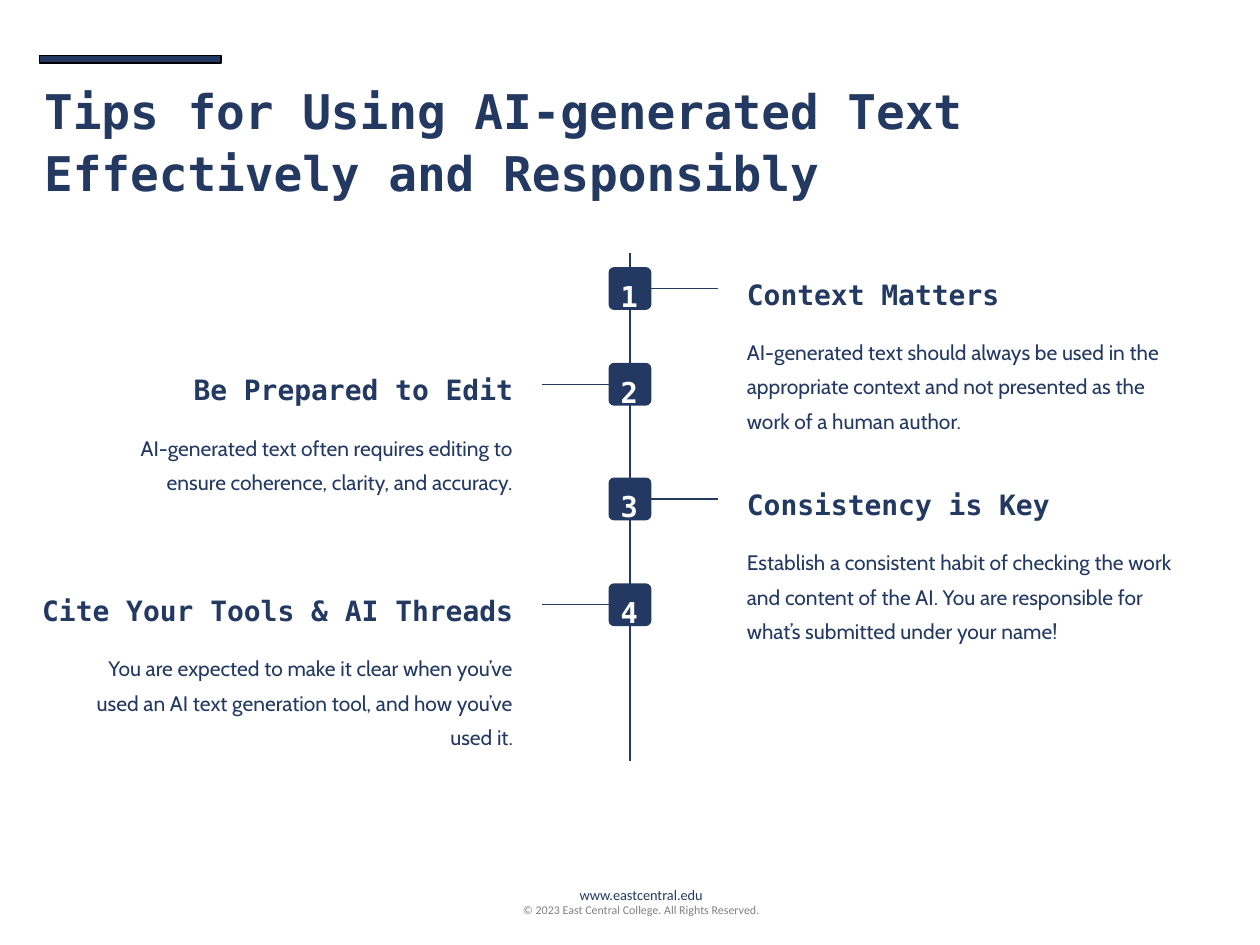
from dataclasses import dataclass

from lxml.etree import SubElement
from pptx import Presentation
from pptx.dml.color import RGBColor
from pptx.enum.shapes import MSO_CONNECTOR as Connector, MSO_SHAPE as Shape
from pptx.enum.text import MSO_ANCHOR as Anchor, MSO_AUTO_SIZE as AutoSize, PP_ALIGN as Align
from pptx.oxml.ns import qn
from pptx.util import Inches, Pt


@dataclass(frozen=True)
class TextStyle:
    """Holds the look of one kind of text."""
    font: str
    size: float
    color: str
    bold: bool = False
    leading: float | None = None


class Theme:
    """Keeps the colours and type sizes together."""
    navy, black = "233962", "000000"
    mono = "DejaVu Sans Mono"
    title = TextStyle(mono, 27.3, navy, True, 35.5)
    number = TextStyle(mono, 16.4, "FFFFFF", True, 21.3)
    heading = TextStyle(mono, 16, navy, True, 17.8)
    body = TextStyle("Cabin", 12, navy, False, 19.7)
    address = TextStyle("Calibri", 8.2, navy)
    rights = TextStyle("Calibri", 6.8, "808080")


class Page:
    """Draws styled elements on a grid of 100 columns by 75 rows."""

    def __init__(self, deck, theme):
        """Starts a title-only slide and measures its grid."""
        self.theme = theme
        self.slide = deck.slides.add_slide(deck.slide_layouts[5])
        self.column = deck.slide_width / 100
        self.row = deck.slide_height / 75

    def place(self, left, top, width, height):
        """Turns grid units into slide lengths."""
        return (round(left * self.column), round(top * self.row),
                round(width * self.column), round(height * self.row))

    def set_lines(self, frame, lines, align, wrap=True):
        """Fills a text frame with one styled run per paragraph."""
        frame.auto_size = AutoSize.NONE
        frame.word_wrap = wrap
        frame.vertical_anchor = Anchor.TOP
        for index, (wording, style) in enumerate(lines):
            paragraph = frame.add_paragraph() if index else frame.paragraphs[0]
            paragraph.alignment = align
            paragraph.space_before = Pt(0)
            if style.leading:
                paragraph.line_spacing = Pt(style.leading)
            run = paragraph.add_run()
            run.text = wording
            run.font.name = style.font
            run.font.size = Pt(style.size)
            run.font.bold = style.bold
            run.font.color.rgb = RGBColor.from_string(style.color)

    def title(self, wording, *area):
        """Moves and fills the title placeholder."""
        heading = self.slide.shapes.title
        heading.left, heading.top, heading.width, heading.height = self.place(*area)
        self.set_lines(heading.text_frame, [(wording, self.theme.title)], Align.LEFT)

    def text(self, lines, *area, align=Align.LEFT, wrap=True):
        """Adds a text box."""
        box = self.slide.shapes.add_textbox(*self.place(*area))
        self.set_lines(box.text_frame, lines, align, wrap)

    def block(self, kind, *area, outline=None, rounding=None):
        """Adds a filled shape."""
        block = self.slide.shapes.add_shape(kind, *self.place(*area))
        block.shadow.inherit = False
        block.fill.solid()
        block.fill.fore_color.rgb = RGBColor.from_string(self.theme.navy)
        if outline:
            block.line.color.rgb = RGBColor.from_string(outline)
            block.line.width = Pt(0)
        else:
            block.line.fill.background()
        if rounding:
            block.adjustments[0] = rounding

    def rule(self, *ends):
        """Adds a thin straight line between two grid points."""
        line = self.slide.shapes.add_connector(Connector.STRAIGHT, *self.place(*ends))
        line.line.color.rgb = RGBColor.from_string(self.theme.navy)
        line.line.width = Pt(0.75)
        SubElement(line._element.spPr, qn("a:effectLst"))

    def tip(self, number, top, heading_width, heading, advice):
        """Adds one numbered tip, odd ones right of the spine and even ones left."""
        on_right = number % 2 == 1
        side, align = (1, Align.LEFT) if on_right else (-1, Align.RIGHT)

        def start(width):
            """Finds the left edge of a text that keeps clear of the spine."""
            return 58.3 if on_right else 41.7 - width

        self.rule(50 + side * 1.7, top + 1.7, 50 + side * 7, top + 1.7)
        self.block(Shape.ROUNDED_RECTANGLE, 48.3, top, 3.4, 3.4, rounding=0.13)
        self.text([(str(number), self.theme.number)], 49.4, top + 0.2, 1.1, 3,
                  align=Align.CENTER, wrap=False)
        self.text([(heading, self.theme.heading)], start(heading_width), top + 0.5,
                  heading_width, 2.5, align=align, wrap=False)
        self.text([(advice, self.theme.body)], start(36), top + 4.5, 36, 8.2, align=align)


TIPS = [
    (21.2, 15.2, "Context Matters",
     "AI-generated text should always be used in the appropriate context "
     "and not presented as the work of a human author."),
    (28.8, 17.8, "Be Prepared to Edit",
     "AI-generated text often requires editing to ensure coherence, clarity, and accuracy."),
    (37.9, 16.9, "Consistency is Key",
     "Establish a consistent habit of checking the work and content of the AI. "
     "You are responsible for what’s submitted under your name!"),
    (46.3, 16.9, "Cite Your Tools & AI Threads",
     "You are expected to make it clear when you’ve used an AI text generation tool, "
     "and how you’ve used it."),
]


def main():
    """Builds and saves the slide."""
    deck = Presentation()
    deck.slide_width, deck.slide_height = Inches(10), Inches(7.5)
    theme = Theme()
    page = Page(deck, theme)
    page.text([("www.eastcentral.edu", theme.address),
               ("© 2023 East Central College. All Rights Reserved.", theme.rights)],
              25.9, 69.8, 50, 3.5, align=Align.CENTER)
    page.block(Shape.RECTANGLE, 3.15, 4.4, 14.4, 0.6, outline=theme.black)
    page.title("Tips for Using AI-generated Text Effectively and Responsibly",
               2.5, 5.6, 79.5, 9.9)
    page.rule(50, 20.1, 50, 60.4)
    for number, tip in enumerate(TIPS, start=1):
        page.tip(number, *tip)
    deck.save("out.pptx")


if __name__ == "__main__":
    main()
